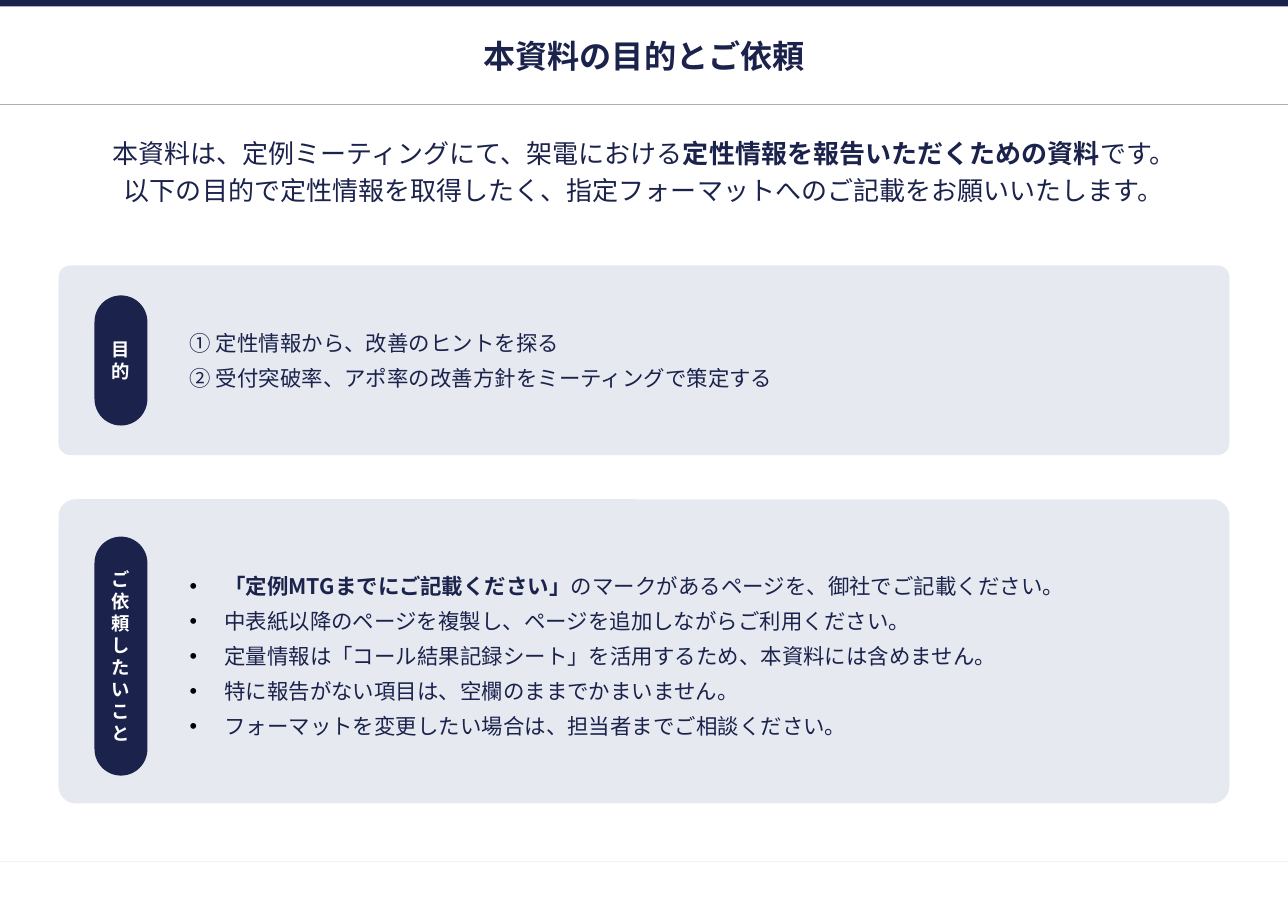
from dataclasses import dataclass

from lxml.etree import SubElement
from pptx import Presentation
from pptx.dml.color import RGBColor
from pptx.enum.shapes import MSO_CONNECTOR as Line, MSO_SHAPE as Kind
from pptx.enum.text import MSO_ANCHOR as Anchor, MSO_AUTO_SIZE as Auto, PP_ALIGN as Align
from pptx.oxml.ns import qn
from pptx.util import Cm, Pt

NAVY = RGBColor(0x1B, 0x22, 0x4C)
PALE = RGBColor(0xE6, 0xEA, 0xF0)
GRAY = RGBColor(0xAF, 0xAF, 0xAF)
MIST = RGBColor(0xF2, 0xF2, 0xF2)
WHITE = RGBColor(0xFF, 0xFF, 0xFF)
FONT = "Noto Sans CJK JP"
WIDTH, HEIGHT = 29.7, 21.0
LEFT, SPAN = 1.35, 27.0


@dataclass
class Box:
    left: float
    top: float
    width: float
    height: float


@dataclass
class Card:
    label: str
    lines: list[str]
    slot: int  # placeholder index
    top: float
    height: float
    round: float
    pill_top: float
    pill_height: float
    bullet: bool = False


CARDS = [
    Card("目的", [
        "① 定性情報から、改善のヒントを探る",
        "② 受付突破率、アポ率の改善方針をミーティングで策定する",
    ], 2, 6.12, 4.37, 0.062, 6.81, 3.0),
    Card("ご依頼したいこと", [
        "*「定例MTGまでにご記載ください」*のマークがあるページを、御社でご記載ください。",
        "中表紙以降のページを複製し、ページを追加しながらご利用ください。",
        "定量情報は「コール結果記録シート」を活用するため、本資料には含めません。",
        "特に報告がない項目は、空欄のままでかまいません。",
        "フォーマットを変更したい場合は、担当者までご相談ください。",
    ], 4, 11.51, 7.01, 0.056, 12.37, 5.51, True),
]


def write(shape, lines: list[str], *, size: float, color: RGBColor = NAVY,
          bold: bool = False, align: Align = Align.LEFT, anchor: Anchor = Anchor.MIDDLE,
          gap: float = 0, after: float = 0, side: float = 0.1, foot: float = 0.1,
          bullet: bool = False) -> None:
    """Fill a shape with paragraphs; text between asterisks is bold."""
    frame = shape.text_frame
    frame.word_wrap, frame.auto_size = True, Auto.NONE
    frame.vertical_anchor = anchor
    frame.margin_left = frame.margin_right = Cm(side)
    frame.margin_top, frame.margin_bottom = Cm(0.1), Cm(foot)
    for row, line in enumerate(lines):
        para = frame.add_paragraph() if row else frame.paragraphs[0]
        para.alignment, para.line_spacing = align, 1.0
        para.space_before = Pt(gap if row else 0)
        para.space_after = Pt(after if row else 0)
        mark(para, bullet)
        for part, text in enumerate(line.split("*")):
            if not text:
                continue
            run = para.add_run()
            run.text = text
            font = run.font
            font.name, font.size = FONT, Pt(size)
            font.bold = bold or part % 2 == 1
            font.color.rgb = color
            SubElement(font._element, qn("a:ea"), typeface=FONT)


def mark(para, bullet: bool) -> None:
    """Give a paragraph a black bullet with a hanging indent, or none."""
    props = para._p.get_or_add_pPr()
    indent = Cm(0.8) if bullet else 0
    props.set("marL", str(indent))
    props.set("indent", str(-indent))
    if bullet:
        tint = SubElement(props, qn("a:buClr"))
        SubElement(tint, qn("a:srgbClr"), val="000000")
        SubElement(props, qn("a:buChar"), char="•")
    else:
        SubElement(props, qn("a:buNone"))


def block(slide, kind: Kind, box: Box, fill: RGBColor, round: float | None = None):
    shape = slide.shapes.add_shape(
        kind, Cm(box.left), Cm(box.top), Cm(box.width), Cm(box.height))
    shape.shadow.inherit = False
    shape.fill.solid()
    shape.fill.fore_color.rgb = fill
    shape.line.fill.background()
    if round is not None:
        shape.adjustments[0] = round
    return shape


def rule(slide, top: float, color: RGBColor) -> None:
    line = slide.shapes.add_connector(Line.STRAIGHT, 0, Cm(top), Cm(WIDTH), Cm(top))
    line.line.color.rgb, line.line.width = color, Pt(0.75)
    SubElement(line._element.spPr, qn("a:effectLst"))


def place(shape, box: Box):
    """Move a placeholder to its box and to the front."""
    shape.left, shape.top = Cm(box.left), Cm(box.top)
    shape.width, shape.height = Cm(box.width), Cm(box.height)
    shape.element.getparent().append(shape.element)
    return shape


def draw(slide, card: Card) -> None:
    block(slide, Kind.ROUNDED_RECTANGLE, Box(LEFT, card.top, SPAN, card.height),
          PALE, card.round)
    body = place(slide.placeholders[card.slot],
                 Box(4.27, card.pill_top, 23.0, card.pill_height))
    write(body, card.lines, size=14, gap=6, bullet=card.bullet)
    pill = block(slide, Kind.ROUNDED_RECTANGLE,
                 Box(2.18, card.pill_top, 1.22, card.pill_height), NAVY, 0.5)
    write(pill, [card.label], size=12, color=WHITE, bold=True,
          align=Align.CENTER, side=0.2)


def main() -> None:
    deck = Presentation()
    deck.slide_width, deck.slide_height = Cm(WIDTH), Cm(HEIGHT)
    slide = deck.slides.add_slide(deck.slide_layouts.get_by_name("Comparison"))
    spare = slide.placeholders[3].element
    spare.getparent().remove(spare)

    # Page frame
    rule(slide, 19.86, MIST)
    block(slide, Kind.RECTANGLE, Box(0, 0, WIDTH, 0.15), NAVY)
    rule(slide, 2.41, GRAY)

    # Title and introduction
    intro = place(slide.placeholders[1], Box(LEFT, 3.07, SPAN, 2.08))
    write(intro, [
        "本資料は、定例ミーティングにて、架電における*定性情報を報告いただくための資料*です。",
        "以下の目的で定性情報を取得したく、指定フォーマットへのご記載をお願いいたします。",
    ], size=17, align=Align.CENTER, anchor=Anchor.TOP, gap=4, after=4)
    title = place(slide.shapes.title, Box(LEFT, 0.81, SPAN, 0.99))
    write(title, ["本資料の目的とご依頼"], size=21, bold=True,
          align=Align.CENTER, foot=0.15)

    # Purpose and requests
    for card in CARDS:
        draw(slide, card)

    deck.save("out.pptx")


if __name__ == "__main__":
    main()
